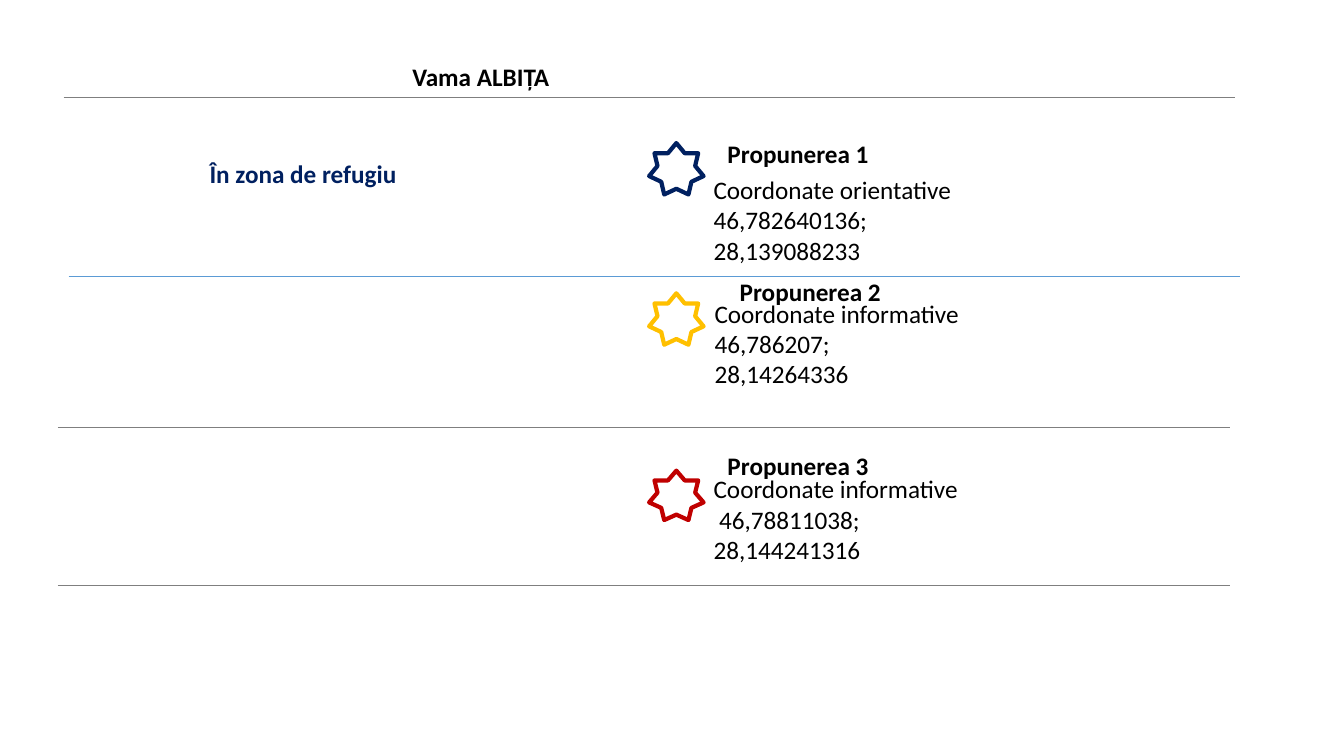
from pptx import Presentation
from pptx.dml.color import RGBColor
from pptx.enum.shapes import MSO_CONNECTOR, MSO_SHAPE
from pptx.enum.text import MSO_ANCHOR, PP_ALIGN
from pptx.oxml.ns import qn
from pptx.util import Pt
from lxml.etree import SubElement

HUES = {
    "black": "000000",
    "navy": "002060",
    "gold": "FFC000",
    "red": "C00000",
    "blue": "5B9BD5",
    "gray": "7F7F7F",
}


def color(name):
    return RGBColor.from_string(HUES[name])


def write(box, lines, hue="black", bold=False, wrap=True):
    frame = box.text_frame
    form = {"word_wrap": wrap, "vertical_anchor": MSO_ANCHOR.TOP}
    for key, value in form.items():
        setattr(frame, key, value)
    frame.text = "\n".join(lines)
    font = {"name": "Calibri", "size": Pt(18), "bold": bold}
    for para in frame.paragraphs:
        para.alignment = PP_ALIGN.LEFT
        for key, value in font.items():
            setattr(para.font, key, value)
        para.font.color.rgb = color(hue)


def place(box, left, top, width, height):
    area = {"left": left, "top": top, "width": width, "height": height}
    for key, value in area.items():
        setattr(box, key, Pt(value))


def label(slide, area, lines, **form):
    box = slide.shapes.add_textbox(*map(Pt, area))
    write(box, lines, **form)
    return box


def rule(slide, left, top, hue):
    line = slide.shapes.add_connector(
        MSO_CONNECTOR.STRAIGHT, Pt(left), Pt(top), Pt(left + 837), Pt(top))
    line.line.color.rgb = color(hue)
    line.line.width = Pt(0.5)
    SubElement(line._element.spPr, qn("a:effectLst"))


def star(slide, top, height, hue):
    mark = slide.shapes.add_shape(
        MSO_SHAPE.STAR_7_POINT, Pt(463.7), Pt(top), Pt(38.9), Pt(height))
    mark.shadow.inherit = False
    mark.fill.background()
    mark.line.color.rgb = color(hue)
    mark.line.width = Pt(3)


def main():
    deck = Presentation()
    deck.slide_width, deck.slide_height = Pt(960), Pt(540)
    slide = deck.slides.add_slide(deck.slide_layouts[5])

    # Heading
    title = slide.shapes.title
    place(title, 287.3, 40.3, 113, 28.8)
    write(title, ["Vama ALBIȚA"], bold=True, wrap=False)
    label(slide, (142.6, 109.4, 360, 28.8), ["În zona de refugiu"],
          hue="navy", bold=True)

    # Dividers
    for left, top, hue in ((45.4, 69.8, "gray"), (49, 197.3, "blue"),
                           (41.4, 305.3, "gray"), (41.4, 418.3, "gray")):
        rule(slide, left, top, hue)

    # Proposals: star, name, coordinates
    plans = (
        ((102.2, 36.7, "navy"), (512.6, 95), (502.6, 121, 197.3, 72.7),
         ["Coordonate orientative 46,782640136; 28,139088233"]),
        ((209.5, 36.7, "gold"), (521.3, 193.7), (503.3, 209.5, 190.8, 72.7),
         ["Coordonate informative", "46,786207; 28,14264336"]),
        ((336.2, 35.3, "red"), (512.6, 318.2), (502.6, 334.8, 190.8, 72.7),
         ["Coordonate informative", "46,78811038;", "28,144241316"]),
    )
    for num, (mark, spot, area, lines) in enumerate(plans, 1):
        star(slide, *mark)
        label(slide, (*spot, 116, 28.8), [f"Propunerea {num}"],
              bold=True, wrap=False)
        box = label(slide, area, lines)

    # Small indent in the last block
    para = box.text_frame.paragraphs[1]
    para._p.get_or_add_pPr().set("marL", str(Pt(4)))

    deck.save("out.pptx")


if __name__ == "__main__":
    main()
